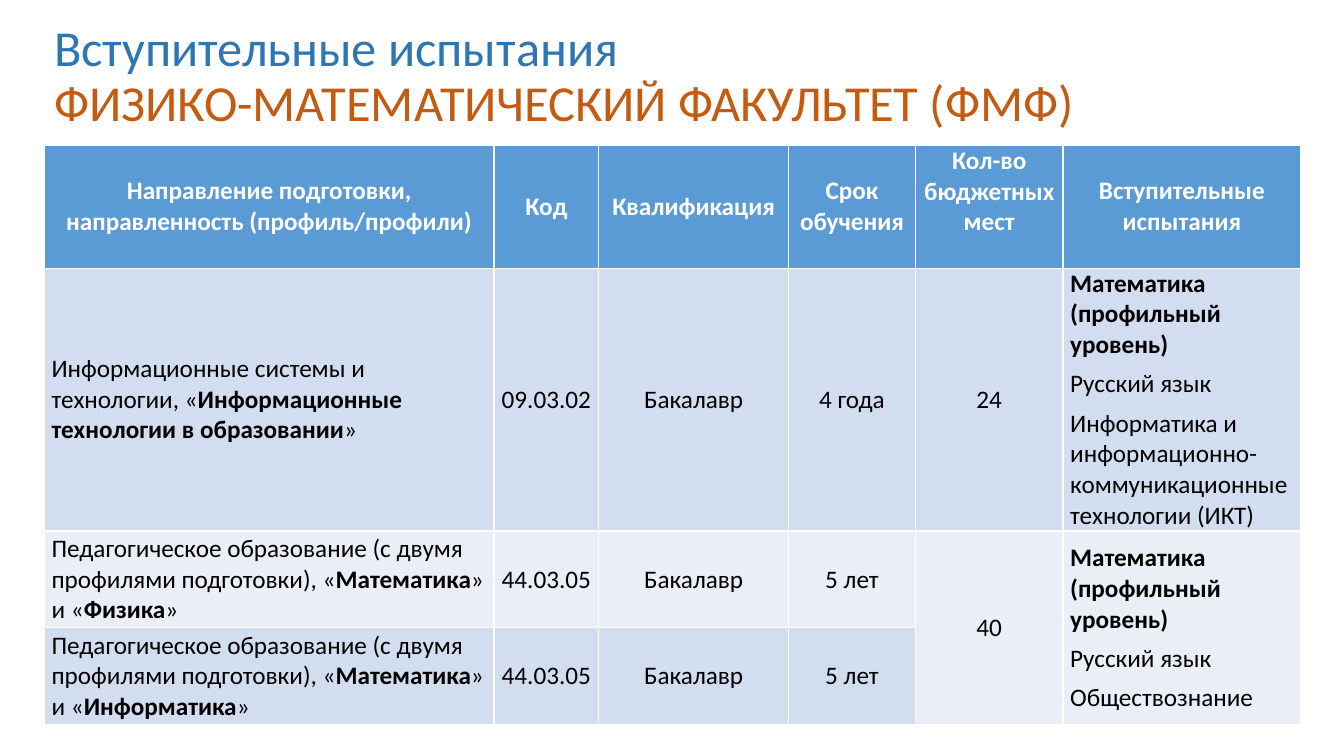
"""Builds a slide with the entrance exam table of a faculty."""
from pptx import Presentation
from pptx.util import Cm, Pt
from pptx.dml.color import RGBColor as Rgb
from pptx.enum.text import PP_ALIGN as Align, MSO_ANCHOR as Anchor, MSO_AUTO_SIZE as Auto

TITLE = [("Вступительные испытания", "blue"),
         ("ФИЗИКО-МАТЕМАТИЧЕСКИЙ ФАКУЛЬТЕТ (ФМФ)", "rust")]
MATH = "*Математика (профильный уровень)*"
PAIR = "Педагогическое образование (с двумя профилями подготовки), «*Математика*» и «*{}*»"
ROWS = [
    ["Направление подготовки,\nнаправленность (профиль/профили)", "Код", "Квалификация",
     "Срок обучения", "Кол-во бюджетных мест", "Вступительные испытания"],
    ["Информационные системы и технологии, «*Информационные технологии в образовании*»",
     "09.03.02", "Бакалавр", "4 года", "24",
     MATH + "\nРусский язык\nИнформатика и информационно-коммуникационные технологии (ИКТ)"],
    [PAIR.format("Физика"), "44.03.05", "Бакалавр", "5 лет", "40",
     MATH + "\nРусский язык\nОбществознание"],
    [PAIR.format("Информатика"), "44.03.05", "Бакалавр", "5 лет"],
]
WIDTHS = [11.33, 2.64, 4.78, 3.2, 3.72, 5.99]
HEIGHTS = [3.07, 6.6, 2.44, 2.44]
LEFT, TOP = 1.12, 3.66
COLORS = {"blue": "2E75B6", "rust": "C55A11", "head": "5B9BD5", "odd": "D2DEEF",
          "even": "EAEFF7", "white": "FFFFFF", "black": "000000"}
CELL = {"vertical_anchor": Anchor.MIDDLE, "margin_left": Cm(0.18),
        "margin_right": Cm(0.18), "margin_top": 0, "margin_bottom": 0}
FRAME = {"vertical_anchor": Anchor.MIDDLE, "word_wrap": True, "auto_size": Auto.NONE,
         "margin_left": Cm(0.25), "margin_right": Cm(0.25),
         "margin_top": 0, "margin_bottom": Cm(0.43)}
PLACE = {"left": Cm(LEFT), "top": Cm(0.69), "width": Cm(30.43), "height": Cm(2.97)}


def apply(item, look):
    for name, value in look.items():
        setattr(item, name, value)


def add_run(par, text, size, color, bold=False):
    run = par.add_run()
    run.text = text
    apply(run.font, {"name": "Calibri", "size": Pt(size), "bold": bold})
    run.font.color.rgb = Rgb.from_string(COLORS[color])


def fill_cell(cell, text, row, col):
    head = row == 0
    band = "head" if head else "odd" if row % 2 else "even"
    apply(cell, CELL)
    cell.fill.solid()
    cell.fill.fore_color.rgb = Rgb.from_string(COLORS[band])
    for num, line in enumerate(text.split("\n")):
        frame = cell.text_frame
        par = frame.add_paragraph() if num else frame.paragraphs[0]
        plain = not head and col in (0, 5)
        par.alignment = Align.LEFT if plain else Align.CENTER
        if plain and col == 5:
            par.space_after = Pt(6)
        for part, words in enumerate(line.split("*")):
            if words:
                add_run(par, words, 18, "white" if head else "black", head or part % 2 == 1)


def add_title(slide):
    title = slide.shapes.title
    apply(title, PLACE)
    apply(title.text_frame, FRAME)
    par = title.text_frame.paragraphs[0]
    apply(par, {"alignment": Align.LEFT, "line_spacing": 0.9})
    for num, (text, color) in enumerate(TITLE):
        if num:
            par.add_line_break()
        add_run(par, text, 36, color)


def add_grid(slide):
    grid = slide.shapes.add_table(len(ROWS), len(WIDTHS), Cm(LEFT), Cm(TOP),
                                  Cm(sum(WIDTHS)), Cm(sum(HEIGHTS))).table
    for col, width in zip(grid.columns, WIDTHS):
        col.width = Cm(width)
    for row, height in zip(grid.rows, HEIGHTS):
        row.height = Cm(height)
    for row, texts in enumerate(ROWS):
        for col, text in enumerate(texts):
            fill_cell(grid.cell(row, col), text, row, col)
    for col in (4, 5):
        grid.cell(2, col).merge(grid.cell(3, col))
    grid.cell(0, 4).margin_bottom = Cm(0.77)


def main():
    deck = Presentation()
    apply(deck, {"slide_width": Cm(33.87), "slide_height": Cm(19.05)})
    slide = deck.slides.add_slide(deck.slide_layouts[5])
    add_title(slide)
    add_grid(slide)
    deck.save("out.pptx")


if __name__ == "__main__":
    main()
